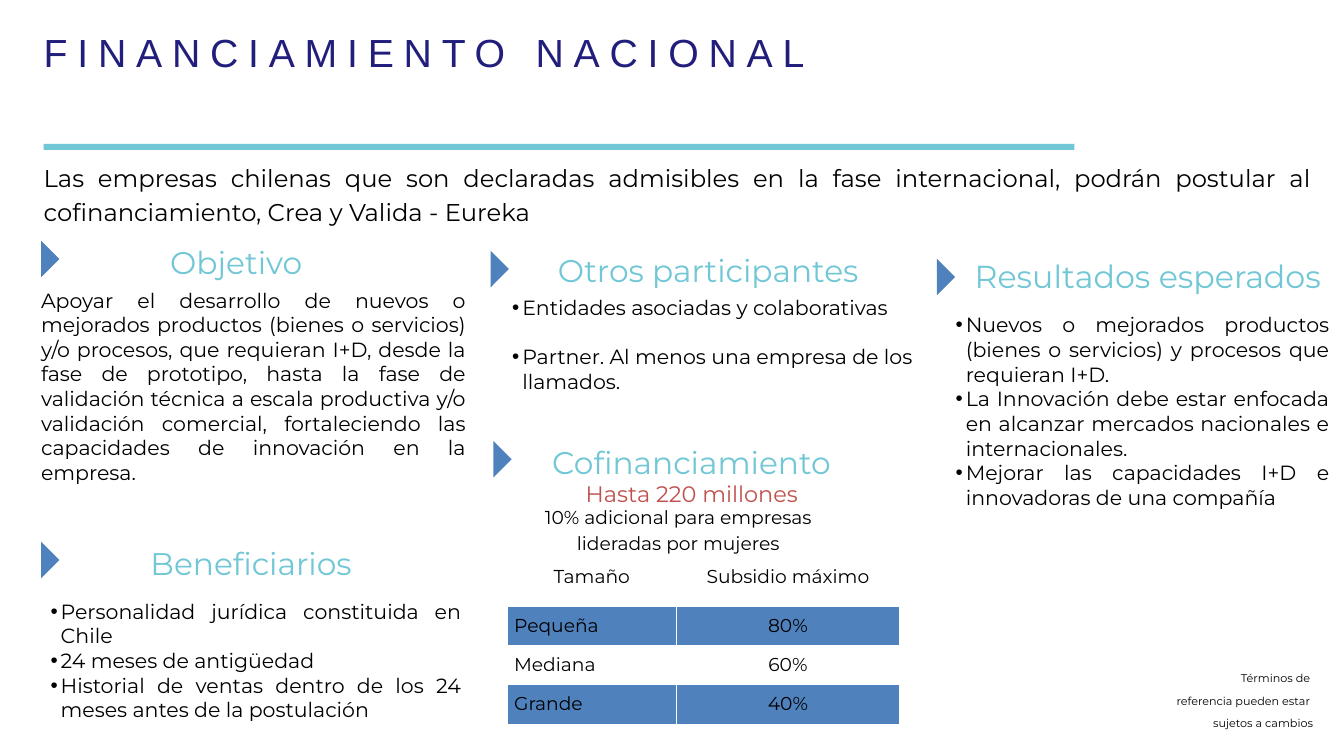
from dataclasses import dataclass
from typing import NamedTuple

from lxml import etree
from pptx import Presentation
from pptx.dml.color import RGBColor
from pptx.enum.shapes import MSO_SHAPE
from pptx.enum.text import MSO_ANCHOR, MSO_AUTO_SIZE, PP_ALIGN
from pptx.oxml.ns import qn
from pptx.util import Pt

LEFT, CENTER, RIGHT, JUSTIFY = PP_ALIGN.LEFT, PP_ALIGN.CENTER, PP_ALIGN.RIGHT, PP_ALIGN.JUSTIFY
MIDDLE = MSO_ANCHOR.MIDDLE
GROW = MSO_AUTO_SIZE.SHAPE_TO_FIT_TEXT
RECTANGLE = MSO_SHAPE.RECTANGLE


@dataclass(frozen=True)
class Theme:
    """Colours, fonts and type sizes of the slide."""
    navy: str = "221E7C"
    teal: str = "71C7D5"
    blue: str = "4F81BD"
    red: str = "C0504D"
    black: str = "000000"
    white: str = "FFFFFF"
    title_font: str = "Arial"
    font: str = "Montserrat"
    title: float = 42
    heading: float = 33.5
    lead: float = 26
    accent: float = 24
    body: float = 22
    small: float = 20
    note: float = 12


THEME = Theme()


class Box(NamedTuple):
    """A rectangle in points."""
    left: float
    top: float
    width: float
    height: float

    def inner(self, dx, dy, width, height):
        """Return a box placed relative to this one."""
        return Box(self.left + dx, self.top + dy, width, height)

    def lengths(self):
        """Return the four sides as Pt lengths."""
        return [Pt(side) for side in self]


def write_text(frame, text, *, size=THEME.body, color=THEME.black, font=THEME.font,
               align=LEFT, line=26.4, spacing=0, bullet=False, gap=0):
    """Fill a text frame with one paragraph for each line of text."""
    frame.word_wrap = True
    for index, content in enumerate(text.split("\n")):
        para = frame.paragraphs[0] if index == 0 else frame.add_paragraph()
        para.alignment, para.line_spacing = align, Pt(line)
        if gap and index:
            para.space_before = Pt(gap)
        if bullet:
            props = para._p.get_or_add_pPr()
            props.set("marL", str(Pt(21)))
            props.set("indent", str(Pt(-10.8)))
            etree.SubElement(props, qn("a:buFont"), typeface=THEME.title_font)
            etree.SubElement(props, qn("a:buChar"), char="•")
        span = para.add_run()
        span.text = content
        span.font.size, span.font.name = Pt(size), font
        span.font.color.rgb = RGBColor.from_string(color)
        if spacing:
            span.font._element.set("spc", str(int(spacing * 100)))


def add_text(page, box, text, **style):
    """Add a text box without margins."""
    frame = page.shapes.add_textbox(*box.lengths()).text_frame
    frame.margin_left = frame.margin_top = frame.margin_right = frame.margin_bottom = 0
    frame.auto_size = GROW
    write_text(frame, text, **style)


def paint(shape, color):
    """Give a shape a flat fill with no outline or shadow."""
    shape.shadow.inherit = False
    shape.fill.solid()
    shape.fill.fore_color.rgb = RGBColor.from_string(color)
    shape.line.fill.background()


def add_header(page, box):
    """Place the title, the rule and the lead sentence."""
    add_text(page, box.inner(0, 0, 1328, 58), "FINANCIAMIENTO NACIONAL", size=THEME.title,
             color=THEME.navy, font=THEME.title_font, line=58.8, spacing=10.5)
    rule = page.shapes.add_shape(RECTANGLE, *box.inner(0, 132.5, 1104.5, 6.5).lengths())
    paint(rule, THEME.teal)
    add_text(page, box.inner(0, 148.3, box.width, 70.6),
             "Las empresas chilenas que son declaradas admisibles en la fase internacional, "
             "podrán postular al cofinanciamiento, Crea y Valida - Eureka",
             size=THEME.lead, align=JUSTIFY, line=36.4)


def add_section(page, box, heading, heading_at, marker_drop, size=THEME.heading, line=47.6):
    """Place a triangular marker and a centred heading at the top of a box."""
    dx, width = heading_at
    left, top, wide, high = box.inner(0, marker_drop, 19.6, 39.4)
    builder = page.shapes.build_freeform(Pt(left), Pt(top))
    builder.add_line_segments([(Pt(left), Pt(top + high)), (Pt(left + wide), Pt(top + high / 2))])
    paint(builder.convert_to_shape(), THEME.blue)
    add_text(page, box.inner(dx, 0, width, line + 3), heading, size=size, color=THEME.teal,
             align=CENTER, line=line)


def add_objective(page, box):
    """Place the objective section."""
    add_section(page, box, "Objetivo", (55.4, 307.4), 4.4)
    add_text(page, box.inner(0, 54.7, box.width, 210),
             "Apoyar el desarrollo de nuevos o mejorados productos (bienes o servicios) y/o "
             "procesos, que requieran I+D, desde la fase de prototipo, hasta la fase de validación "
             "técnica a escala productiva y/o validación comercial, fortaleciendo las capacidades "
             "de innovación en la empresa.", align=JUSTIFY)


def add_beneficiaries(page, box):
    """Place the beneficiaries section."""
    add_section(page, box, "Beneficiarios", (71.3, 307.4), 5)
    add_text(page, box.inner(0, 66.2, box.width, 131),
             "Personalidad jurídica constituida en Chile\n24 meses de antigüedad\n"
             "Historial de ventas dentro de los 24 meses antes de la postulación",
             align=JUSTIFY, bullet=True)


def add_participants(page, box):
    """Place the section on other participants."""
    add_section(page, box, "Otros participantes", (23, 420.5), 7.2)
    add_text(page, box.inner(13, 54.7, box.width, 105),
             "Entidades asociadas y colaborativas\nPartner. Al menos una empresa de los llamados.",
             bullet=True, gap=26.4)


def add_results(page, box):
    """Place the section on expected results."""
    add_section(page, box, "Resultados esperados", (20.9, 410.4), 9.4, size=34)
    add_text(page, box.inner(10.1, 67, box.width, 210),
             "Nuevos o mejorados productos (bienes o servicios) y procesos que requieran I+D.\n"
             "La Innovación debe estar enfocada en alcanzar mercados nacionales e internacionales.\n"
             "Mejorar las capacidades I+D e innovadoras de una compañía",
             align=JUSTIFY, bullet=True)


def add_borders(cell, sides):
    """Draw thin white borders on the given sides of a table cell."""
    props = cell._tc.get_or_add_tcPr()
    for index, side in enumerate(sides):
        border = etree.Element(qn(f"a:{side}"), w=str(Pt(1)))
        fill = etree.SubElement(border, qn("a:solidFill"))
        etree.SubElement(fill, qn("a:srgbClr"), val=THEME.white)
        props.insert(index, border)


def add_subsidy_table(page, box):
    """Place the table of maximum subsidy by company size."""
    rows = [("Tamaño", "Subsidio máximo"), ("Pequeña", "80%"), ("Mediana", "60%"), ("Grande", "40%")]
    table = page.shapes.add_table(len(rows), 2, *box.lengths()).table
    table.first_row = table.horz_banding = False
    for column, share in zip(table.columns, (0.43, 0.57)):
        column.width = Pt(box.width * share)
    for r, values in enumerate(rows):
        table.rows[r].height = Pt(box.height * (0.333 if r == 0 else 0.222))
        for c, value in enumerate(values):
            cell = table.cell(r, c)
            cell.margin_left = cell.margin_right = cell.margin_top = cell.margin_bottom = Pt(7.2)
            cell.vertical_anchor = MIDDLE
            if r % 2:
                cell.fill.solid()
                cell.fill.fore_color.rgb = RGBColor.from_string(THEME.blue)
            else:
                cell.fill.background()
            add_borders(cell, ("lnL", "lnR", "lnT", "lnB"))
            write_text(cell.text_frame, value, size=THEME.small, line=24,
                       align=LEFT if r and c == 0 else CENTER)


def add_funding(page, box):
    """Place the co-financing section with its texts in front of the table."""
    add_subsidy_table(page, box.inner(15.1, 121.7, 420.5, 190))
    add_section(page, box, "Cofinanciamiento", (-10.8, 446.4), 8, line=50.4)
    add_text(page, box.inner(48.2, 49.7, 329, 28), "Hasta 220 millones", size=THEME.accent,
             color=THEME.red, align=CENTER, line=28.8)
    add_text(page, box.inner(33.8, 74.2, 329, 55),
             "10% adicional para empresas lideradas por mujeres", size=THEME.small,
             align=CENTER, line=27.6)


def add_note(page, box):
    """Place the closing note."""
    add_text(page, box, "Términos de \nreferencia pueden estar \nsujetos a cambios",
             size=THEME.note, align=RIGHT, line=24)


def main():
    """Build the slide and save the deck."""
    deck = Presentation()
    deck.slide_width, deck.slide_height = Pt(1440), Pt(810)
    page = deck.slides.add_slide(deck.slide_layouts[6])
    add_header(page, Box(46.8, 21.6, 1359.4, 219))
    add_objective(page, Box(44, 253.4, 455, 265))
    add_beneficiaries(page, Box(44, 575.3, 450, 198))
    add_participants(page, Box(525.6, 261.4, 440, 160))
    add_funding(page, Box(528.5, 464.4, 436, 312))
    add_results(page, Box(1003.7, 267.8, 410.4, 277))
    add_note(page, Box(1237.7, 709.9, 169.2, 67))
    deck.save("out.pptx")


if __name__ == "__main__":
    main()
